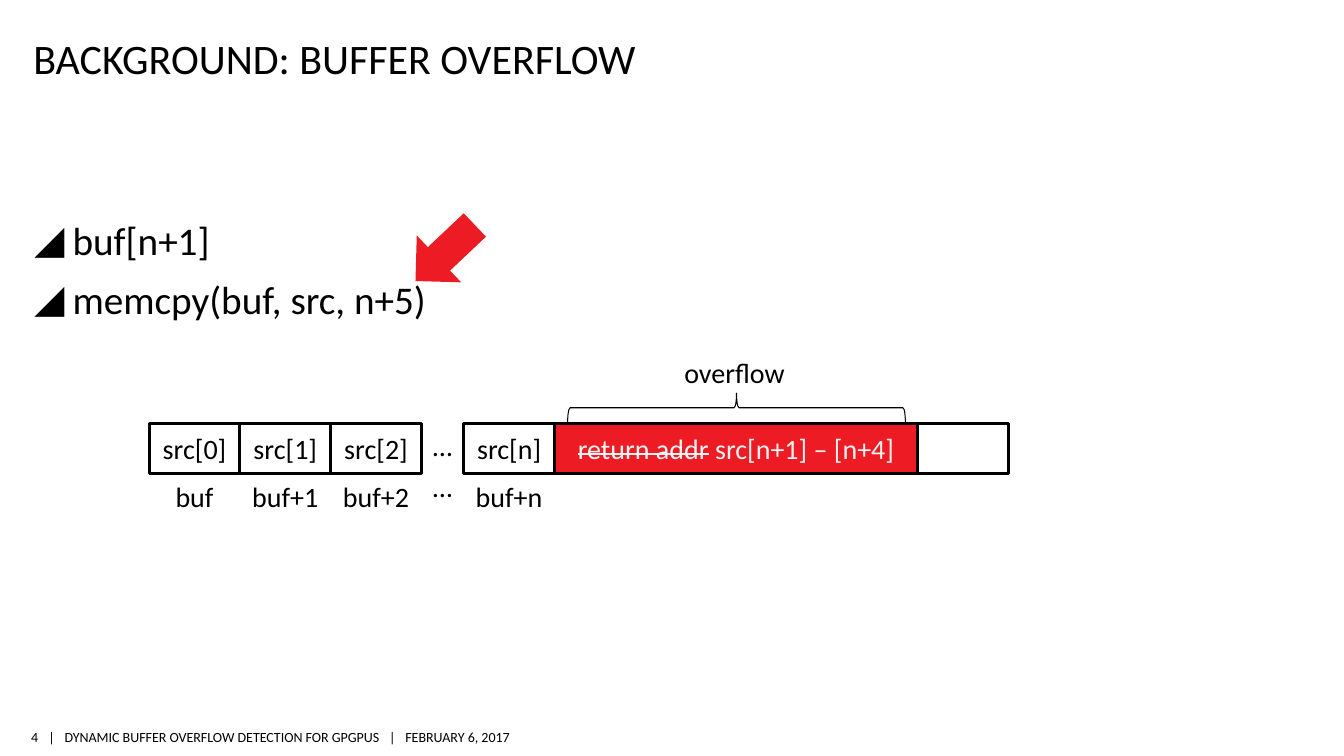
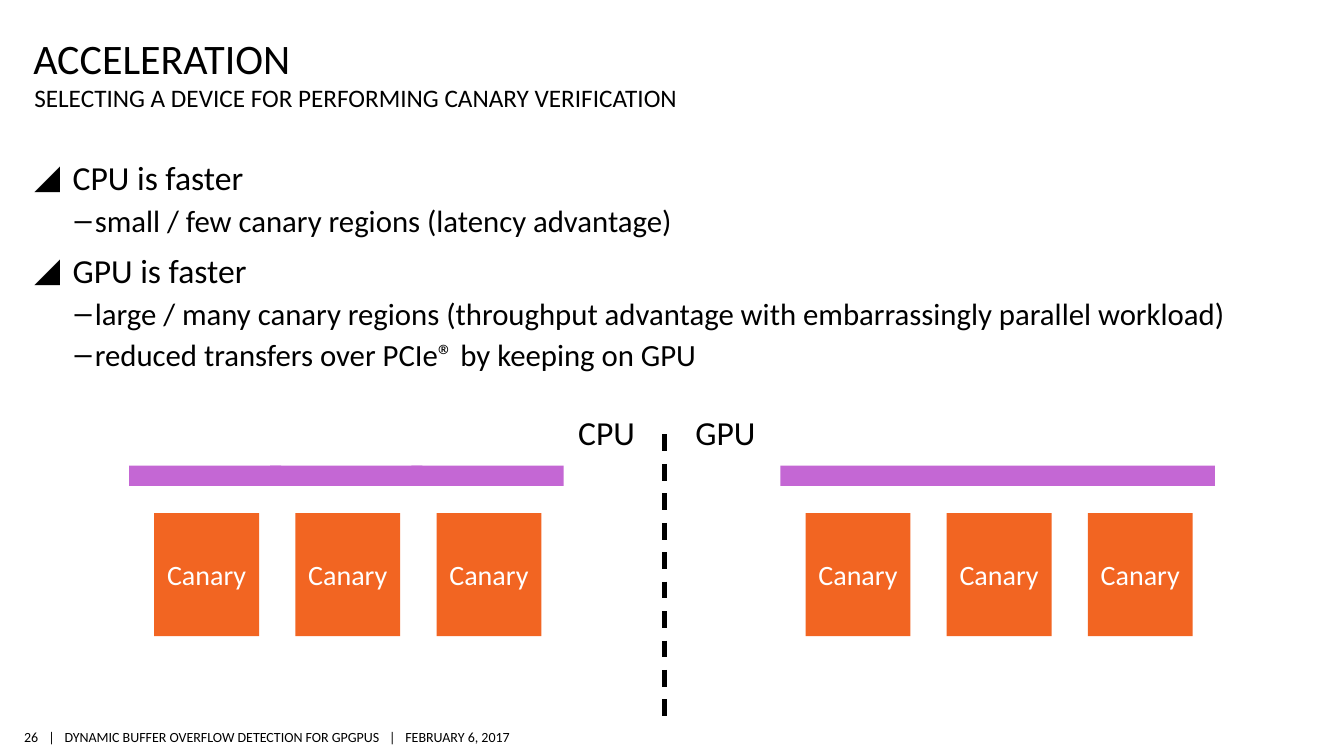
from lxml import etree
from pptx import Presentation
from pptx import util as u
from pptx.dml.color import RGBColor
from pptx.enum import dml, shapes, text
from pptx.oxml.ns import qn

BLACK = RGBColor(0x00, 0x00, 0x00)
WHITE = RGBColor(0xFF, 0xFF, 0xFF)
PALE = RGBColor(0xF2, 0xF2, 0xF2)
RED = RGBColor(0xED, 0x1C, 0x24)
ORANGE = RGBColor(0xF2, 0x65, 0x22)
PURPLE = RGBColor(0xC4, 0x67, 0xD4)
FONT = "Calibri"

FOOTER = "|\tDYNAMIC BUFFER OVERFLOW DETECTION FOR GPGPUS\t|\tFEBRUARY 6, 2017"
FOOTER_TABS = (0.16, 3.38, 3.54)
BULLETS = (("◢", 0.38, -0.38, 8), ("‒", 0.6, -0.2, 3))

OVERFLOW = {
    "number": 4,
    "title": "BACKGROUND: BUFFER OVERFLOW",
    "body": [(0, "buf[n+1]"), (0, "memcpy(buf, src, n+5)")],
}
CELLS = [("src[0]", "buf"), ("src[1]", "buf+1"), ("src[2]", "buf+2"), ("src[n]", "buf+n")]
OVERWRITTEN = ("return addr", " src[n+1] – [n+4]")

ACCELERATION = {
    "number": 26,
    "title": "ACCELERATION",
    "subtitle": "SELECTING A DEVICE FOR PERFORMING CANARY VERIFICATION",
    "body": [
        (0, "CPU is faster"),
        (1, "small / few canary regions (latency advantage)"),
        (0, "GPU is faster"),
        (1, "large / many canary regions (throughput advantage with embarrassingly parallel workload)"),
        (1, "reduced transfers over PCIe® by keeping on GPU"),
    ],
}
DEVICES = [("CPU", 5.62, 1.28, (1.51, 1.51, 1.51)), ("GPU", 6.8, 7.74, (4.31,))]
CANARY_STEP = 1.4


def place(shape, left, top, width, height):
    shape.left, shape.top = u.Inches(left), u.Inches(top)
    shape.width, shape.height = u.Inches(width), u.Inches(height)


def set_frame(shape, insets, anchor):
    frame = shape.text_frame
    frame.word_wrap = True
    frame.auto_size = text.MSO_AUTO_SIZE.NONE
    frame.vertical_anchor = anchor
    frame.margin_left, frame.margin_top, frame.margin_right, frame.margin_bottom = map(u.Inches, insets)
    return frame


def style(para, size, color=BLACK, align=text.PP_ALIGN.LEFT):
    para.alignment = align
    for span in para.runs:
        span.font.name = FONT
        span.font.size = u.Pt(size)
        span.font.color.rgb = color


def add_text(page, words, at, size, align=text.PP_ALIGN.CENTER):
    box = page.shapes.add_textbox(*map(u.Inches, at))
    frame = set_frame(box, (0, 0.05, 0, 0.05), text.MSO_ANCHOR.MIDDLE)
    frame.text = words
    style(frame.paragraphs[0], size, align=align)
    return frame.paragraphs[0]


def add_shape(page, kind, at, fill=None, outline=None, rotation=0):
    shape = page.shapes.add_shape(kind, *map(u.Inches, at))
    shape.shadow.inherit = False
    shape.rotation = rotation
    if fill is None:
        shape.fill.background()
    else:
        shape.fill.solid()
        shape.fill.fore_color.rgb = fill
    if outline is None:
        shape.line.fill.background()
    else:
        shape.line.color.rgb = BLACK
        shape.line.width = u.Pt(outline)
    return shape


def add_box(page, at, words=(), fill=None, outline=None, color=BLACK):
    box = add_shape(page, shapes.MSO_SHAPE.RECTANGLE, at, fill, outline)
    para = set_frame(box, (0.1, 0.05, 0.1, 0.05), text.MSO_ANCHOR.MIDDLE).paragraphs[0]
    for part in words:
        para.add_run().text = part
    style(para, 20, color, text.PP_ALIGN.CENTER)
    return para


def set_bullet(para, level):
    mark, margin, indent, before = BULLETS[level]
    para.level = level
    props = para._p.get_or_add_pPr()
    props.set("marL", str(u.Inches(margin)))
    props.set("indent", str(u.Inches(indent)))
    color = etree.SubElement(etree.SubElement(props, qn("a:buClr")), qn("a:srgbClr"))
    color.set("val", str(BLACK))
    etree.SubElement(props, qn("a:buChar")).set("char", mark)
    return before


def fill_body(holder, lines, sizes, top):
    place(holder, 0.34, top, 12.4, 6.91 - top)
    frame = set_frame(holder, (0, 0.05, 0, 0.05), text.MSO_ANCHOR.TOP)
    frame.text = "\n".join(words for _, words in lines)
    for index, (para, (level, _)) in enumerate(zip(frame.paragraphs, lines)):
        before = set_bullet(para, level)
        para.space_before = u.Pt(before if index else 0)
        style(para, sizes[level])


def add_footer(page, number):
    add_text(page, str(number), (0.22, 7.18, 0.16, 0.26), 10, text.PP_ALIGN.RIGHT)
    para = add_text(page, FOOTER, (0.48, 7.18, 4.71, 0.26), 10, text.PP_ALIGN.LEFT)
    tabs = etree.SubElement(para._p.get_or_add_pPr(), qn("a:tabLst"))
    for stop in FOOTER_TABS:
        etree.SubElement(tabs, qn("a:tab"), pos=str(u.Inches(stop)), algn="l")


def add_page(deck, layout, content, sizes, body_top):
    page = deck.slides.add_slide(deck.slide_layouts[layout])
    title = page.shapes.title
    place(title, 0.33, 0.3, 11.4, 0.52)
    frame = set_frame(title, (0, 0.05, 0, 0), text.MSO_ANCHOR.BOTTOM)
    frame.text = content["title"]
    style(frame.paragraphs[0], 30)
    fill_body(page.placeholders[1], content["body"], sizes, body_top)
    add_footer(page, content["number"])
    return page


def add_subtitle(holder, words):
    place(holder, 0.34, 0.82, 11.4, 0.31)
    frame = set_frame(holder, (0, 0, 0, 0), text.MSO_ANCHOR.TOP)
    frame.text = words
    para = frame.paragraphs[0]
    props = para._p.get_or_add_pPr()
    props.set("marL", "0")
    props.set("indent", "0")
    etree.SubElement(props, qn("a:buNone"))
    para.space_before = u.Pt(0)
    style(para, 18)


def build_overflow(deck):
    page = add_page(deck, 1, OVERFLOW, (28,), 2.1)
    cell, top, height = 0.9, 4.2, 0.5
    for index, (source, address) in enumerate(CELLS):
        left = 4.6 if source == "src[n]" else 1.48 + index * cell
        add_box(page, (left, top, cell, height), [source], outline=2)
        add_text(page, address, (left, top + height, cell, 0.44), 20)
    for dots_top in (top, top + 0.4):
        add_text(page, "…", (4.2, dots_top, 0.38, 0.44), 20)
    add_box(page, (9.1, top, cell, height), outline=2)
    para = add_box(page, (5.5, top, 4 * cell, height), OVERWRITTEN, RED, 2, PALE)
    para.runs[0].font._element.set("strike", "sngStrike")
    add_shape(page, shapes.MSO_SHAPE.RIGHT_BRACE, (7.16, 2.37, 0.29, 3.35), outline=0.75, rotation=270)
    add_text(page, "overflow", (6.66, 3.47, 1.25, 0.44), 20)
    add_shape(page, shapes.MSO_SHAPE.RIGHT_ARROW, (4.01, 2.19, 0.81, 0.64), RED, rotation=136.6)


def build_acceleration(deck):
    page = add_page(deck, 3, ACCELERATION, (24, 22), 1.51)
    add_subtitle(page.placeholders[2], ACCELERATION["subtitle"])
    for device, label_left, left, bars in DEVICES:
        add_text(page, device, (label_left, 4.04, 0.79, 0.5), 24)
        for index, width in enumerate(bars):
            add_box(page, (left + index * CANARY_STEP, 4.62, width, 0.2), fill=PURPLE)
        for index in range(3):
            at = (left + 0.25 + index * CANARY_STEP, 5.09, 1.04, 1.22)
            add_box(page, at, ["Canary"], ORANGE, color=WHITE)
    ends = map(u.Inches, (6.59, 4.31, 6.59, 7.12))
    divider = page.shapes.add_connector(shapes.MSO_CONNECTOR.STRAIGHT, *ends)
    divider.line.color.rgb = BLACK
    divider.line.width = u.Pt(3)
    divider.line.dash_style = dml.MSO_LINE.DASH
    etree.SubElement(divider._element.spPr, qn("a:effectLst"))


def main():
    deck = Presentation()
    deck.slide_width, deck.slide_height = u.Inches(13.33), u.Inches(7.5)
    build_overflow(deck)
    build_acceleration(deck)
    deck.save("out.pptx")


if __name__ == "__main__":
    main()
